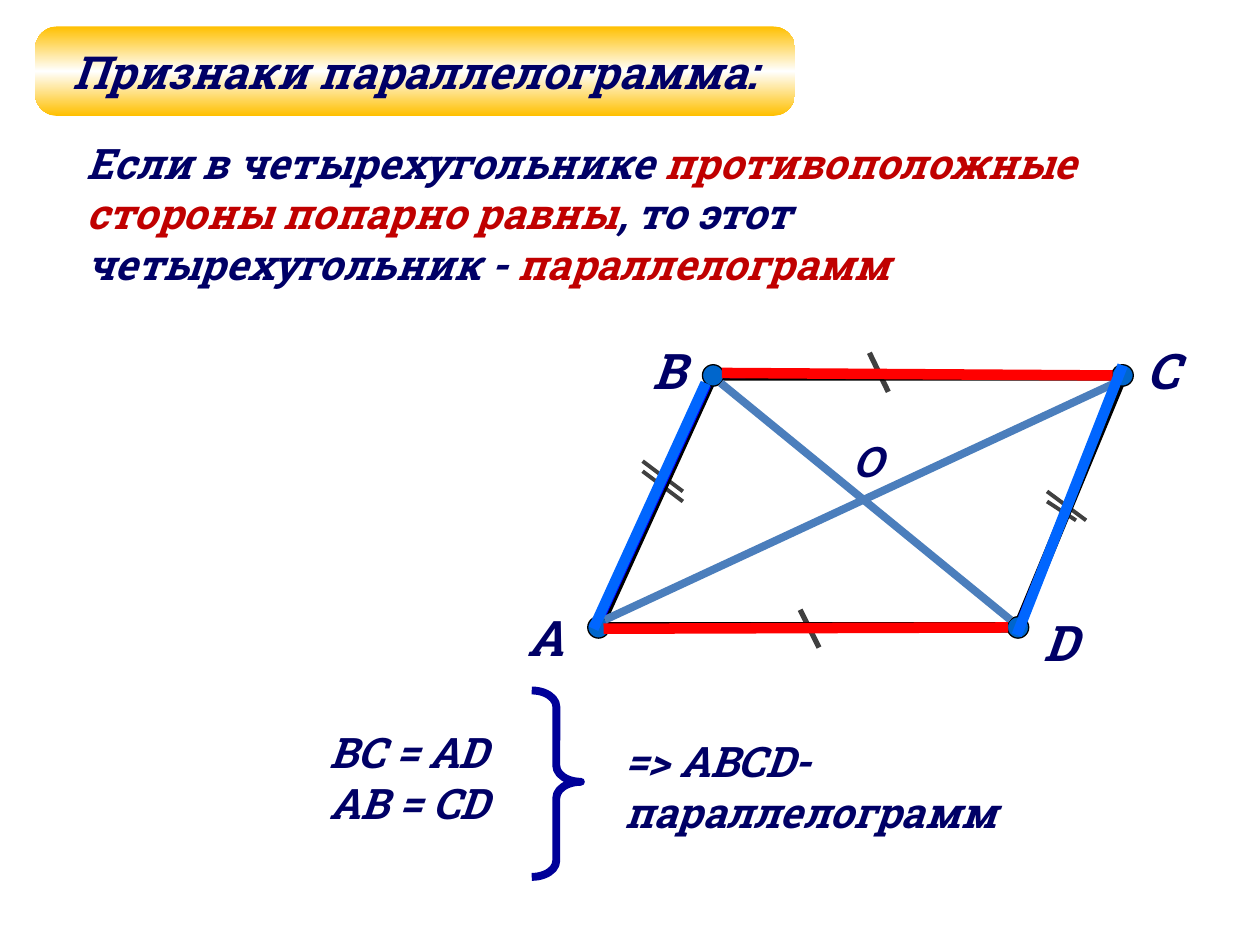
from copy import deepcopy

from pptx import Presentation
from pptx.dml.color import RGBColor
from pptx.enum.shapes import MSO_CONNECTOR, MSO_SHAPE
from pptx.enum.text import MSO_ANCHOR, MSO_AUTO_SIZE, PP_ALIGN
from pptx.oxml.ns import qn
from pptx.util import Inches, Pt
from lxml import etree

FONT = "Roboto Slab"
NAVY = RGBColor(0x00, 0x00, 0x66)
CRIMSON = RGBColor(0xC0, 0x00, 0x00)
BRACE_BLUE = RGBColor(0x00, 0x00, 0x99)
THIN_BLUE = RGBColor(0x00, 0x00, 0xFF)
SIDE_BLUE = RGBColor(0x00, 0x66, 0xFF)
SIDE_RED = RGBColor(0xFF, 0x00, 0x00)
DIAGONAL_BLUE = RGBColor(0x4B, 0x7E, 0xBC)
VERTEX_BLUE = RGBColor(0x00, 0x66, 0xCC)
TICK_GRAY = RGBColor(0x40, 0x40, 0x40)
BLACK = RGBColor(0x00, 0x00, 0x00)
WHITE = RGBColor(0xFF, 0xFF, 0xFF)
GOLD = RGBColor(0xFF, 0xC0, 0x00)

# Vertices of the parallelogram
A, B, C, D = (4.75, 4.98), (5.66, 2.98), (8.91, 2.98), (8.08, 4.98)
VERTEX_SIZE = 0.17


def style_run(run, size, color=NAVY):
    run.font.name = FONT
    run.font.size = Pt(size)
    run.font.bold = run.font.italic = True
    run.font.color.rgb = color


def add_text(slide, box, paragraphs, size=24, wrap=True):
    """Each paragraph is a list of (text, color) runs."""
    frame = slide.shapes.add_textbox(*map(Inches, box)).text_frame
    frame.word_wrap = wrap
    frame.auto_size = MSO_AUTO_SIZE.SHAPE_TO_FIT_TEXT
    for index, runs in enumerate(paragraphs):
        paragraph = frame.add_paragraph() if index else frame.paragraphs[0]
        for text, color in runs:
            run = paragraph.add_run()
            run.text = text
            style_run(run, size, color)


def add_line(slide, start, end, color, width):
    line = slide.shapes.add_connector(
        MSO_CONNECTOR.STRAIGHT, *map(Inches, (*start, *end)))
    line.line.color.rgb = color
    line.line.width = Pt(width)
    etree.SubElement(line._element.spPr, qn("a:effectLst"))


def add_outline(slide, points, color, width, close=False):
    corners = [(Inches(x), Inches(y)) for x, y in points]
    builder = slide.shapes.build_freeform(*corners[0])
    builder.add_line_segments(corners[1:], close=close)
    outline = builder.convert_to_shape()
    outline.shadow.inherit = False
    outline.fill.background()
    outline.line.color.rgb = color
    outline.line.width = Pt(width)


def add_vertex(slide, center):
    left, top = (value - VERTEX_SIZE / 2 for value in center)
    vertex = slide.shapes.add_shape(
        MSO_SHAPE.OVAL, *map(Inches, (left, top, VERTEX_SIZE, VERTEX_SIZE)))
    vertex.shadow.inherit = False
    vertex.fill.solid()
    vertex.fill.fore_color.rgb = VERTEX_BLUE
    vertex.line.color.rgb = BLACK
    vertex.line.width = Pt(0.75)


def add_brace(slide, box):
    brace = slide.shapes.add_shape(MSO_SHAPE.RIGHT_BRACE, *map(Inches, box))
    brace.adjustments[0] = 0.33
    brace.adjustments[1] = 0.49
    brace.shadow.inherit = False
    brace.fill.background()
    brace.line.color.rgb = BRACE_BLUE
    brace.line.width = Pt(4.5)


def add_title(slide, box, text):
    title = slide.shapes.add_shape(
        MSO_SHAPE.ROUNDED_RECTANGLE, *map(Inches, box))
    title.adjustments[0] = 0.25
    title.shadow.inherit = False
    title.line.fill.background()

    # Gold, white, gold from top to bottom
    title.fill.gradient()
    title.fill.gradient_angle = 90
    first_stop = title.fill.gradient_stops[0]._gs
    first_stop.addnext(deepcopy(first_stop))
    for stop, position, color in zip(
            title.fill.gradient_stops, (0, 0.5, 1), (GOLD, WHITE, GOLD)):
        stop.position = position
        stop.color.rgb = color

    frame = title.text_frame
    frame.word_wrap = False
    frame.vertical_anchor = MSO_ANCHOR.MIDDLE
    frame.text = text
    frame.paragraphs[0].alignment = PP_ALIGN.CENTER
    style_run(frame.paragraphs[0].runs[0], 26)


def add_parallelogram(slide):
    # Tick marks of equal sides
    for start, end, width in (
            ((6.35, 4.84), (6.5, 5.14), 3),
            ((6.9, 2.8), (7.05, 3.11), 3),
            ((5.1, 3.74), (5.42, 3.98), 2.25),
            ((5.1, 3.66), (5.42, 3.9), 2.25),
            ((8.31, 3.98), (8.54, 4.13), 2.25),
            ((8.31, 3.9), (8.62, 4.13), 2.25)):
        add_line(slide, start, end, TICK_GRAY, width)

    # Vertex letters
    for letter, left, top, width in (
            ("В", 5.08, 2.65, 0.5), ("А", 4.09, 4.77, 0.48),
            ("С", 9, 2.65, 0.49), ("D", 8.18, 4.81, 0.52)):
        add_text(slide, (left, top, width, 0.57), [[(letter, NAVY)]],
                 size=28, wrap=False)

    # Outline and its thin sides
    add_outline(slide, (A, D, C, B), BLACK, 6, close=True)
    for side in ((B, (8.88, 2.97)), ((8.88, 2.98), (8.08, 4.95)),
                 (B, (4.75, 4.97)), (A, (8.08, 4.99))):
        add_outline(slide, side, THIN_BLUE, 3)

    for vertex in (B, C, D, A):
        add_vertex(slide, vertex)

    # Diagonals and their crossing
    add_line(slide, (5.72, 3.04), (8.02, 4.92), DIAGONAL_BLUE, 4.5)
    add_line(slide, (4.8, 4.92), (8.85, 3.04), DIAGONAL_BLUE, 4.5)
    add_text(slide, (6.67, 3.41, 0.47, 0.51), [[("O", NAVY)]])

    # Highlighted pairs of opposite sides
    for start, end, color in (
            ((5.73, 2.96), (8.83, 2.98), SIDE_RED),
            ((4.79, 4.99), (8, 4.98), SIDE_RED),
            ((4.71, 4.99), (5.6, 3.04), SIDE_BLUE),
            ((8.07, 5.04), (8.91, 2.9), SIDE_BLUE)):
        add_line(slide, start, end, color, 6)


def main():
    presentation = Presentation()
    presentation.slide_width = Inches(10)
    presentation.slide_height = Inches(7.5)
    slide = presentation.slides.add_slide(presentation.slide_layouts[6])

    # Theorem
    add_text(slide, (0.59, 1.04, 8.71, 1.31), [[
        ("Если в четырехугольнике ", NAVY),
        ("противоположные стороны попарно равны", CRIMSON),
        (", то этот четырехугольник - ", NAVY),
        ("параллелограмм", CRIMSON)]])

    # Conditions and conclusion
    add_brace(slide, (4.22, 5.48, 0.39, 1.48))
    add_text(slide, (2.52, 5.72, 2.73, 0.91),
             [[("ВС = АD", NAVY)], [("AB = CD", NAVY)]])
    add_text(slide, (4.86, 5.79, 3.83, 0.91),
             [[("=> ABCD- параллелограмм", NAVY)]])

    add_parallelogram(slide)
    add_title(slide, (0.28, 0.21, 6.03, 0.71), "Признаки параллелограмма:")

    presentation.save("out.pptx")


if __name__ == "__main__":
    main()
